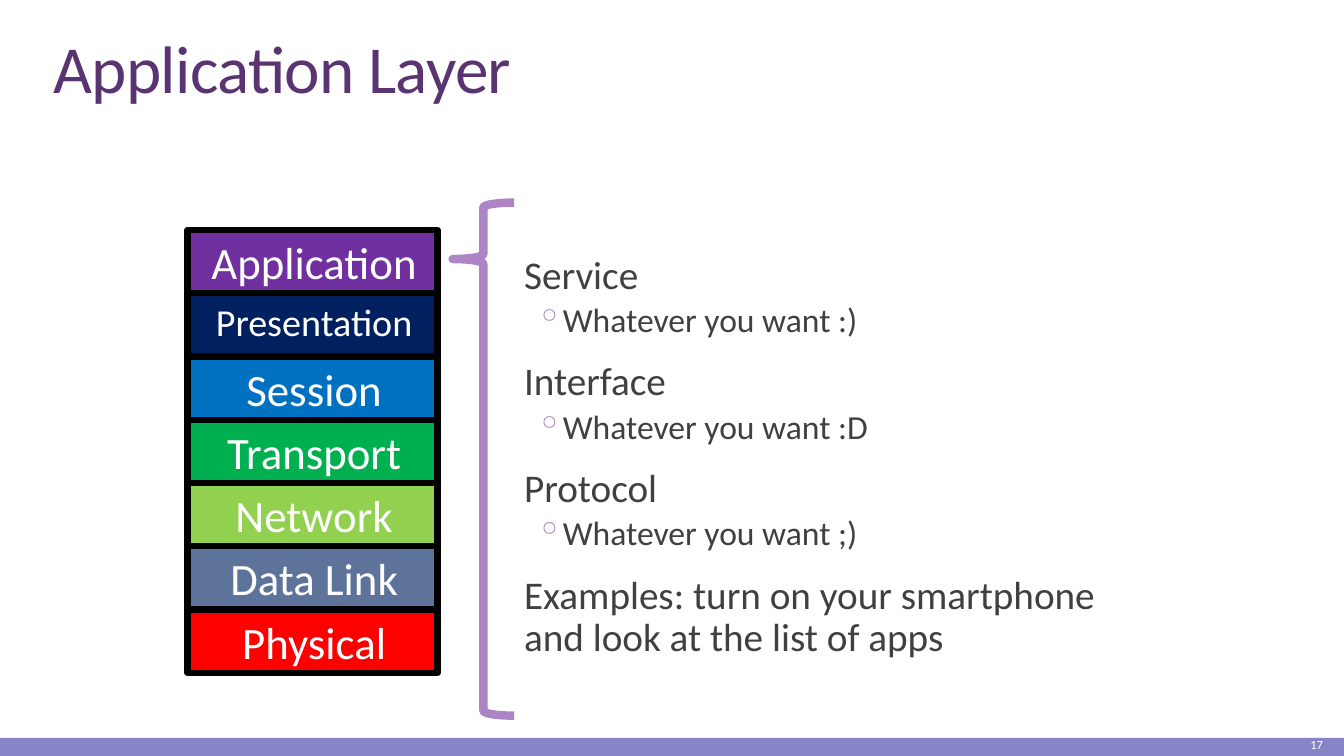
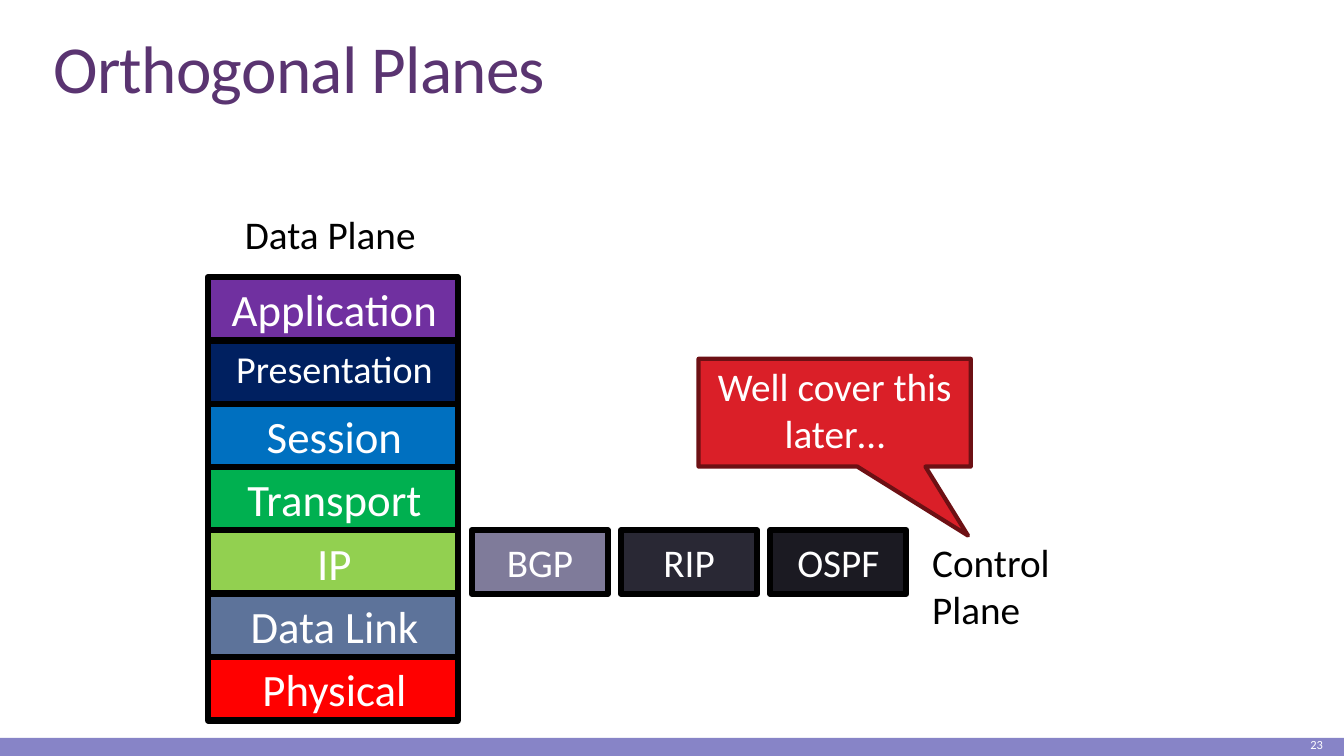
"""Build two slides on network layers: the application layer and the orthogonal planes."""
from dataclasses import dataclass
from typing import Any, Optional

from lxml import etree
from pptx import Presentation
from pptx import util as u
from pptx.dml import color
from pptx.enum import shapes, text
from pptx.oxml import ns

COLORS = {
    "band": "8784C7", "title": "5A3471", "accent": "AD84C6", "body": "404040",
    "white": "FFFFFF", "black": "000000",
    "application": "7030A0", "presentation": "002060", "session": "0070C0",
    "transport": "00B050", "network": "92D050", "link": "5D739A", "physical": "FF0000",
    "bgp": "7F7B9A", "rip": "292834", "ospf": "1B1A22",
    "callout": "DA1F28", "callout_edge": "6D1014",
}
FONT = "Calibri"
ROW_STEP, ROW_HEIGHT, STACK_WIDTH = 45.2, 45.4, 178.5
CENTER, RIGHT = text.PP_ALIGN.CENTER, text.PP_ALIGN.RIGHT
TOP, MIDDLE, BOTTOM = text.MSO_ANCHOR.TOP, text.MSO_ANCHOR.MIDDLE, text.MSO_ANCHOR.BOTTOM
RECTANGLE = shapes.MSO_SHAPE.RECTANGLE


@dataclass(frozen=True)
class Area:
    left: float
    top: float
    width: float
    height: float

    def lengths(self) -> list[u.Pt]:
        return [u.Pt(value) for value in (self.left, self.top, self.width, self.height)]


@dataclass(frozen=True)
class Layer:
    label: str
    fill: str
    size: float = 32


@dataclass(frozen=True)
class Point:
    label: str
    bulleted: bool = False


def layers(network_label: str) -> list[Layer]:
    return [
        Layer("Application", "application"),
        Layer("Presentation", "presentation", 27.2),
        Layer("Session", "session"),
        Layer("Transport", "transport"),
        Layer(network_label, "network"),
        Layer("Data Link", "link"),
        Layer("Physical", "physical"),
    ]


PROTOCOLS = [Layer("BGP", "bgp", 28), Layer("RIP", "rip", 28), Layer("OSPF", "ospf", 28)]
POINTS = [
    Point("Service"), Point("Whatever you want :)", True),
    Point("Interface"), Point("Whatever you want :D", True),
    Point("Protocol"), Point("Whatever you want ;)", True),
    Point("Examples: turn on your smartphone and look at the list of apps"),
]


def rgb(name: str) -> color.RGBColor:
    return color.RGBColor.from_string(COLORS[name])


def apply(target: Any, formats: dict[str, Any]) -> None:
    for name, value in formats.items():
        setattr(target, name, value)


def write(para: Any, label: str, size: float, ink: str, **formats: Any) -> Any:
    apply(para, formats)
    span = para.add_run()
    span.text = label
    apply(span.font, {"name": FONT, "size": u.Pt(size)})
    span.font.color.rgb = rgb(ink)
    return span


def add_label(page: Any, area: Area, label: str, size: float, ink: str,
              anchor: Any = TOP, **formats: Any) -> Any:
    frame = page.shapes.add_textbox(*area.lengths()).text_frame
    apply(frame, {"word_wrap": True, "vertical_anchor": anchor})
    return write(frame.paragraphs[0], label, size, ink, **formats)


def add_box(page: Any, kind: Any, area: Area, fill: Optional[str],
            edge: Optional[str] = None, weight: float = 0) -> Any:
    box = page.shapes.add_shape(kind, *area.lengths())
    box.shadow.inherit = False
    for paint, name in ((box.fill, fill), (box.line.fill, edge)):
        if name:
            paint.solid()
            paint.fore_color.rgb = rgb(name)
        else:
            paint.background()
    if edge:
        box.line.width = u.Pt(weight)
    return box


def fill_text(box: Any, label: str, size: float, **frame_formats: Any) -> None:
    apply(box.text_frame, {"word_wrap": True, **frame_formats})
    write(box.text_frame.paragraphs[0], label, size, "white", alignment=CENTER)


def add_page(deck: Any, title: str, number: int) -> Any:
    page = deck.slides.add_slide(deck.slide_layouts[6])
    add_box(page, RECTANGLE, Area(0, 527, 960, 13), "band")
    heading = add_label(page, Area(31, 22.3, 910, 57.6), title, 48, "title",
                        BOTTOM, line_spacing=0.85)
    heading.font._element.set("spc", "-50")
    add_label(page, Area(849, 524.2, 103, 15.8), str(number), 8.9, "white",
              MIDDLE, alignment=RIGHT)
    return page


def add_stack(page: Any, left: float, top: float, network_label: str) -> None:
    for row, layer in enumerate(layers(network_label)):
        area = Area(left, top + row * ROW_STEP, STACK_WIDTH, ROW_HEIGHT)
        box = add_box(page, RECTANGLE, area, layer.fill, "black", 4.5)
        fill_text(box, layer.label, layer.size, vertical_anchor=TOP, margin_left=u.Pt(9.4))


def add_bullet(para: Any) -> None:
    props = para._p.get_or_add_pPr()
    apply_to = {"marL": u.Pt(30.2), "indent": u.Pt(-14.4)}
    for name, value in apply_to.items():
        props.set(name, str(int(value)))
    tint = etree.SubElement(props, ns.qn("a:buClr"))
    etree.SubElement(tint, ns.qn("a:srgbClr"), val=COLORS["accent"])
    etree.SubElement(props, ns.qn("a:buChar"), char="◦")


def add_points(page: Any, area: Area) -> None:
    frame = page.shapes.add_textbox(*area.lengths()).text_frame
    apply(frame, {"word_wrap": True, "vertical_anchor": MIDDLE,
                  "margin_left": u.Pt(0), "margin_right": u.Pt(0)})
    for index, point in enumerate(POINTS):
        para = frame.add_paragraph() if index else frame.paragraphs[0]
        if point.bulleted:
            add_bullet(para)
            size, before, after = 24, 2, 4
        else:
            para._p.get_or_add_pPr().set("marL", str(int(u.Pt(7.2))))
            size, before, after = 28, 12 if index else 0, 2
        write(para, point.label, size, "body", line_spacing=0.9,
              space_before=u.Pt(before), space_after=u.Pt(after))


def build_application(deck: Any) -> None:
    page = add_page(deck, "Application Layer", 17)
    add_points(page, Area(367.2, 126, 460.8, 401.8))
    add_stack(page, 134, 164.2, "Network")
    brace = add_box(page, shapes.MSO_SHAPE.LEFT_BRACE, Area(323.3, 144.7, 43.9, 366.5),
                    None, "accent", 6)
    brace.adjustments[0], brace.adjustments[1] = 0.08, 0.11


def build_planes(deck: Any) -> None:
    page = add_page(deck, "Orthogonal Planes", 23)
    top = 198
    add_stack(page, 148.5, top, "IP")
    add_label(page, Area(167.8, 146.9, 141.1, 41), "Data Plane", 28, "black")
    for column, protocol in enumerate(PROTOCOLS):
        area = Area(337 + column * 106.6, top + 4 * ROW_STEP, 97.2, ROW_HEIGHT)
        box = add_box(page, RECTANGLE, area, protocol.fill, "black", 4.5)
        fill_text(box, protocol.label, protocol.size, vertical_anchor=MIDDLE)
    add_label(page, Area(658.8, 380.9, 115, 75), "Control Plane", 28, "black")
    callout = add_box(page, shapes.MSO_SHAPE.RECTANGULAR_CALLOUT,
                      Area(499, 256.3, 194.4, 77), "callout", "callout_edge", 3)
    callout.adjustments[0], callout.adjustments[1] = 0.49, 1.14
    fill_text(callout, "Well cover this later…", 28, vertical_anchor=TOP, margin_top=u.Pt(2.2))


def main() -> None:
    deck = Presentation()
    apply(deck, {"slide_width": u.Pt(960), "slide_height": u.Pt(540)})
    build_application(deck)
    build_planes(deck)
    deck.save("out.pptx")


if __name__ == "__main__":
    main()
